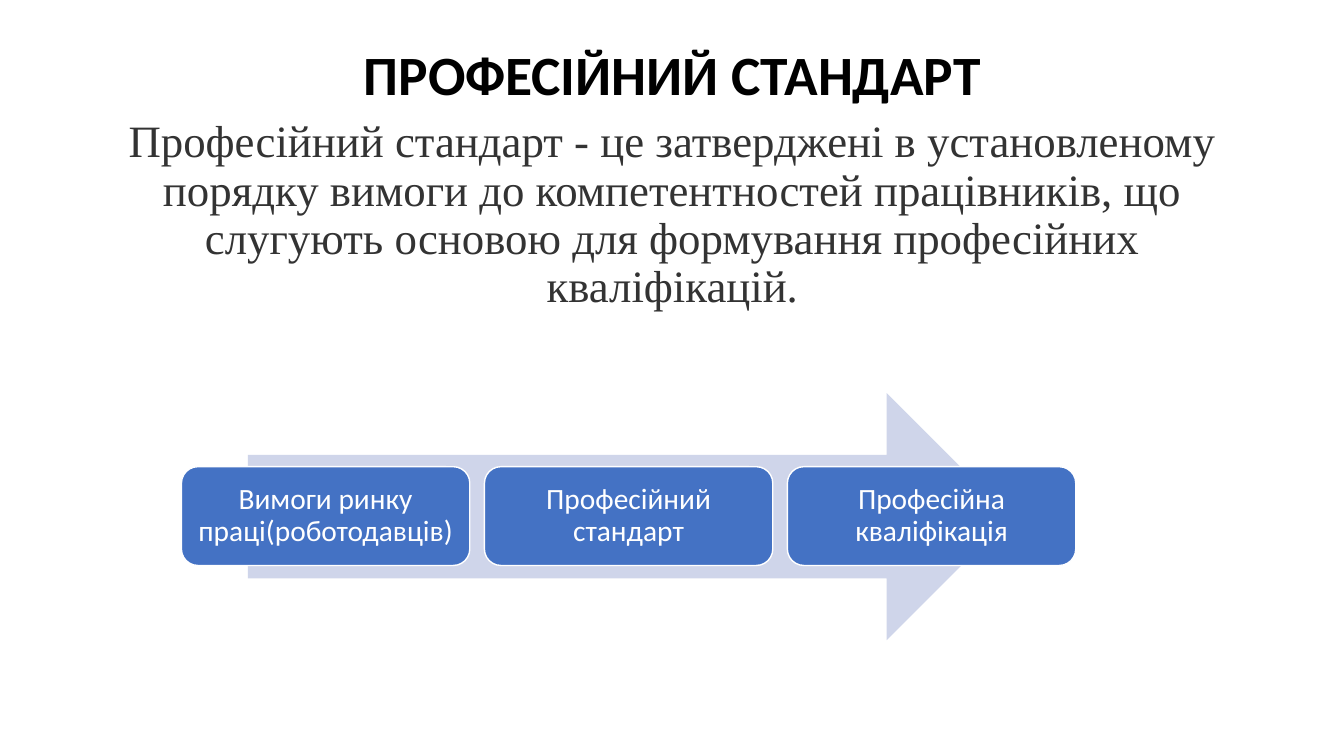
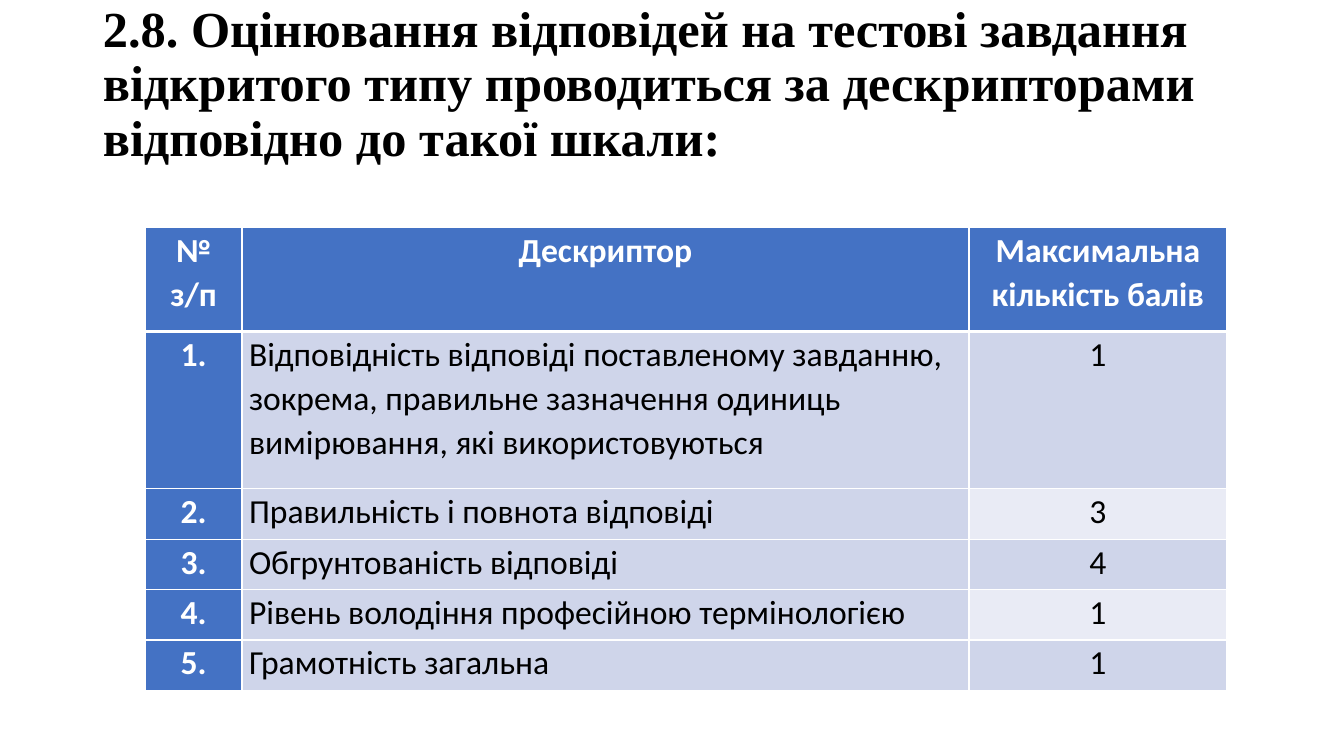
from pptx import Presentation
from pptx.dml.color import RGBColor
from pptx.enum.shapes import MSO_SHAPE
from pptx.enum.text import MSO_ANCHOR, MSO_AUTO_SIZE, PP_ALIGN
from pptx.oxml.ns import qn
from pptx.util import Inches, Pt
from lxml import etree

# Shared colours, fonts and constants
BLACK = RGBColor(0x00, 0x00, 0x00)
WHITE = RGBColor(0xFF, 0xFF, 0xFF)
GREY = RGBColor(0x33, 0x33, 0x33)
BLUE = RGBColor(0x44, 0x72, 0xC4)
PALE = RGBColor(0xCF, 0xD5, 0xEA)
LIGHT = RGBColor(0xE9, 0xEB, 0xF5)
SANS, SERIF = "Calibri", "Times New Roman"
LEFT, CENTER = PP_ALIGN.LEFT, PP_ALIGN.CENTER
TOP, MIDDLE = MSO_ANCHOR.TOP, MSO_ANCHOR.MIDDLE
ARROW, ROUND = MSO_SHAPE.RIGHT_ARROW, MSO_SHAPE.ROUNDED_RECTANGLE
NO_FIT = MSO_AUTO_SIZE.NONE
EDGE, WIDE = 0.92, 11.5
TITLE_ONLY = 5

STEPS = [
    "Вимоги ринку праці(роботодавців)",
    "Професійний стандарт",
    "Професійна кваліфікація",
]
HEAD = ["№ з/п", "Дескриптор", "Максимальна кількість балів"]
SCALE = [
    ("Відповідність відповіді поставленому завданню, зокрема, "
     "правильне зазначення одиниць вимірювання, які використовуються", 1),
    ("Правильність і повнота відповіді", 3),
    ("Обгрунтованість відповіді", 4),
    ("Рівень володіння професійною термінологією", 1),
    ("Грамотність загальна", 1),
]


def write(frame, text, size=24, font=SANS, color=BLACK, bold=False,
          align=CENTER, line=0.9, before=0, after=0):
    frame.word_wrap = True
    para = frame.paragraphs[0]
    para.alignment = align
    para.line_spacing = line
    para.space_before, para.space_after = Pt(before), Pt(after)
    run = para.add_run()
    run.text = text
    run.font.size, run.font.name = Pt(size), font
    run.font.bold = bold
    run.font.color.rgb = color


def add_slide(deck, title, top, height, **style):
    """Add a slide with a bold black title."""
    slide = deck.slides.add_slide(deck.slide_layouts[TITLE_ONLY])
    shape = slide.shapes.title
    shape.left, shape.top = Inches(EDGE), Inches(top)
    shape.width, shape.height = Inches(WIDE), Inches(height)
    frame = shape.text_frame
    frame.auto_size = NO_FIT
    frame.vertical_anchor = MIDDLE
    write(frame, title, bold=True, **style)
    return slide


def add_box(slide, kind, left, top, width, height, fill, line=None):
    shape = slide.shapes.add_shape(
        kind, Inches(left), Inches(top), Inches(width), Inches(height))
    shape.shadow.inherit = False
    shape.fill.solid()
    shape.fill.fore_color.rgb = fill
    if line is None:
        shape.line.fill.background()
    else:
        shape.line.color.rgb = line
        shape.line.width = Pt(1)
    return shape


def add_step(slide, left, text):
    shape = add_box(slide, ROUND, left, 4.63, 2.86, 0.98, BLUE, WHITE)
    frame = shape.text_frame
    frame.margin_left = frame.margin_right = Inches(0.09)
    frame.margin_top = frame.margin_bottom = Inches(0.09)
    frame.vertical_anchor = MIDDLE
    write(frame, text, size=21, color=WHITE)


def set_edges(cell, **widths):
    """Draw white cell borders; widths in points by side L, R, T, B."""
    props = cell._tc.get_or_add_tcPr()
    for side in "LRTB":
        width = Pt(widths.get(side, 1))
        edge = etree.SubElement(props, qn(f"a:ln{side}"), w=str(width))
        fill = etree.SubElement(edge, qn("a:solidFill"))
        etree.SubElement(fill, qn("a:srgbClr"), val=str(WHITE))


def fill_cell(cell, text, row, col):
    label = row == 0 or col == 0
    set_edges(cell, T=3 if row == 1 else 1, B=3 if row == 0 else 1)
    cell.fill.solid()
    band = LIGHT if col == 2 and row % 2 == 0 else PALE
    cell.fill.fore_color.rgb = BLUE if label else band
    cell.margin_left = cell.margin_right = Inches(0.07)
    cell.margin_top = cell.margin_bottom = 0
    cell.vertical_anchor = TOP
    write(cell.text_frame, text, color=WHITE if label else BLACK, bold=label,
          align=LEFT if col == 1 and row else CENTER, line=1.07, after=8)


def add_grid(slide, rows, widths, heights, left, top):
    table = slide.shapes.add_table(
        len(rows), len(widths), Inches(left), Inches(top),
        Inches(sum(widths)), Inches(sum(heights))).table
    for col, width in zip(table.columns, widths):
        col.width = Inches(width)
    for row, height in zip(table.rows, heights):
        row.height = Inches(height)
    for r, texts in enumerate(rows):
        for c, text in enumerate(texts):
            fill_cell(table.cell(r, c), text, r, c)


def build_flow(deck):
    slide = add_slide(deck, "ПРОФЕСІЙНИЙ СТАНДАРТ", 0.4, 0.73, size=39.6)
    # Definition
    body = slide.shapes.add_textbox(
        Inches(EDGE), Inches(1.13), Inches(WIDE), Inches(2.11))
    write(body.text_frame,
          "Професійний стандарт - це затверджені в установленому порядку "
          "вимоги до компетентностей працівників, що слугують основою для "
          "формування професійних кваліфікацій.",
          size=32, font=SERIF, color=GREY, before=10)
    # Steps over the arrow
    add_box(slide, ARROW, 2.46, 3.9, 7.56, 2.45, PALE)
    for i, text in enumerate(STEPS):
        add_step(slide, 1.8 + 3.005 * i, text)


def build_scale(deck):
    slide = add_slide(
        deck,
        "2.8. Оцінювання відповідей на тестові завдання відкритого типу "
        "проводиться за дескрипторами відповідно до такої шкали:",
        0, 1.7, size=36, font=SERIF, align=LEFT)
    # Scoring table
    rows = [HEAD] + [(f"{i}.", text, str(mark))
                     for i, (text, mark) in enumerate(SCALE, 1)]
    add_grid(slide, rows, [0.96, 7.21, 2.56], [1.03, 1.56] + [0.5] * 4,
             1.44, 2.26)


def main():
    deck = Presentation()
    deck.slide_width, deck.slide_height = Inches(13.33), Inches(7.5)
    build_flow(deck)
    build_scale(deck)
    deck.save("out.pptx")


if __name__ == "__main__":
    main()
